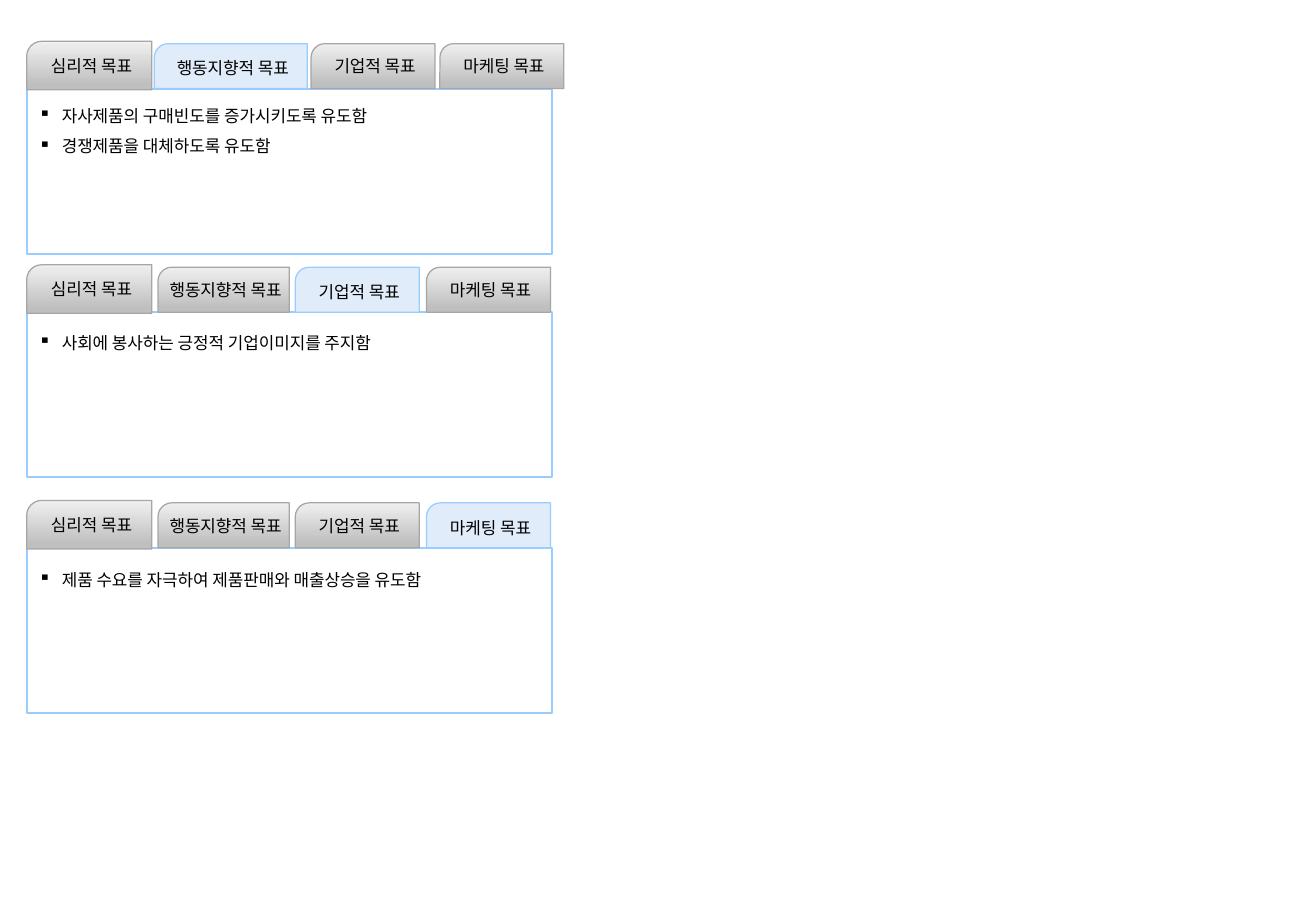
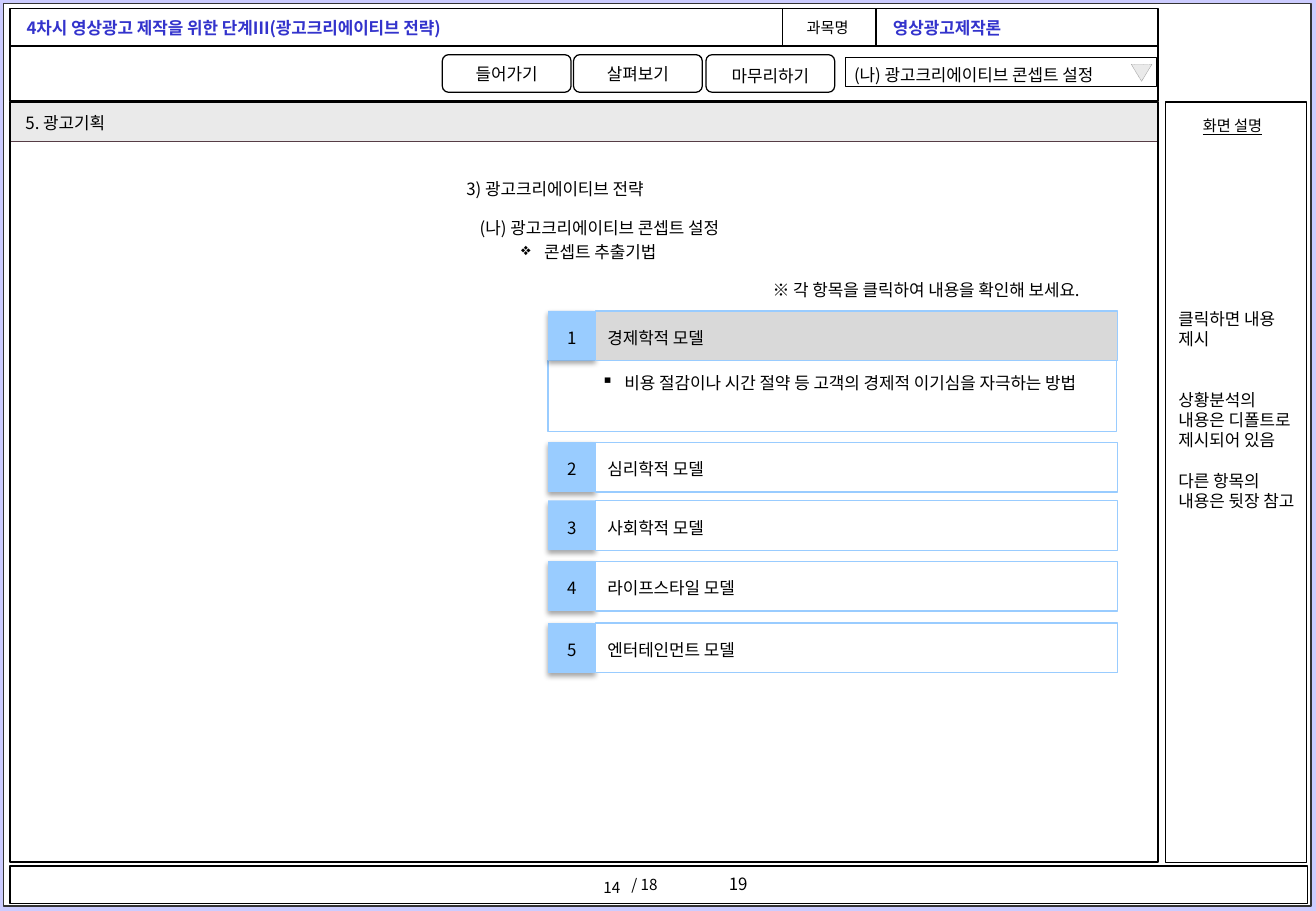
from copy import deepcopy
from dataclasses import dataclass
from typing import NamedTuple, Optional

from lxml.etree import SubElement
from pptx import Presentation
from pptx.dml.color import RGBColor
from pptx.enum.dml import MSO_LINE
from pptx.enum.shapes import MSO_SHAPE as Preset
from pptx.enum.text import MSO_ANCHOR as Anchor, MSO_AUTO_SIZE as AutoSize, PP_ALIGN as Align
from pptx.oxml.ns import qn
from pptx.shapes.autoshape import Shape
from pptx.slide import Slide
from pptx.util import Inches, Pt


@dataclass(frozen=True)
class Theme:
    font: str = "Noto Sans CJK KR"
    body: float = 10
    small: float = 9
    loose: float = 1.2
    black: RGBColor = RGBColor.from_string("000000")
    white: RGBColor = RGBColor.from_string("FFFFFF")
    border: RGBColor = RGBColor.from_string("333333")
    heading: RGBColor = RGBColor.from_string("3333CC")
    backdrop: RGBColor = RGBColor.from_string("CCCCFF")
    band: RGBColor = RGBColor.from_string("EAEAEA")
    band_line: RGBColor = RGBColor.from_string("563C45")
    arrow_line: RGBColor = RGBColor.from_string("969696")
    accent: RGBColor = RGBColor.from_string("99CCFF")
    active_tab: RGBColor = RGBColor.from_string("E1ECFB")
    tab_line: RGBColor = RGBColor.from_string("A6A6A6")
    open_row: RGBColor = RGBColor.from_string("D9D9D9")
    tab_stops: tuple[tuple[float, str], ...] = (
        (0, "BFBFBF"), (0.1, "BFBFBF"), (0.9, "EAEAEA"), (1, "F2F2F2"))


THEME = Theme()


class Area(NamedTuple):
    left: float
    top: float
    width: float
    height: float


@dataclass(frozen=True)
class TextStyle:
    size: float = THEME.body
    color: RGBColor = THEME.black
    bold: bool = False
    underline: bool = False
    align: Align = Align.LEFT
    anchor: Anchor = Anchor.TOP
    wrap: bool = True
    spacing: float = 1.0
    bullet: str = ""
    indent: float = 0


class Line(NamedTuple):
    text: str
    before: float = 0


class TabSpan(NamedTuple):
    left: float
    width: float


@dataclass(frozen=True)
class TabPanel:
    top: float
    active: int
    spans: tuple[TabSpan, ...]
    text_top: float
    lines: tuple[Line, ...]


class ModelRow(NamedTuple):
    top: float
    label: str


PLAIN = TextStyle()
LOOSE = TextStyle(spacing=THEME.loose)
BULLETS = TextStyle(bullet="▪", indent=0.19)
TAB = TextStyle(align=Align.CENTER, anchor=Anchor.MIDDLE, wrap=False)
CENTERED = TextStyle(align=Align.CENTER, anchor=Anchor.MIDDLE, spacing=THEME.loose)
ROW_LABEL = TextStyle(anchor=Anchor.MIDDLE, spacing=THEME.loose)

TABS = ("심리적 목표", "행동지향적 목표", "기업적 목표", "마케팅 목표")
WIDE_SPANS = (TabSpan(0.22, 1.03), TabSpan(1.27, 1.26), TabSpan(2.56, 1.02), TabSpan(3.62, 1.02))
EVEN_SPANS = (TabSpan(0.22, 1.03), TabSpan(1.3, 1.08), TabSpan(2.43, 1.02), TabSpan(3.51, 1.02))
PANELS = (
    TabPanel(0.73, 1, WIDE_SPANS, 0.82, (
        Line("자사제품의 구매빈도를 증가시키도록 유도함"), Line("경쟁제품을 대체하도록 유도함", 6))),
    TabPanel(2.57, 2, EVEN_SPANS, 2.69, (Line("사회에 봉사하는 긍정적 기업이미지를 주지함"),)),
    TabPanel(4.51, 3, EVEN_SPANS, 4.64, (Line("제품 수요를 자극하여 제품판매와 매출상승을 유도함"),)),
)
MODELS = (
    ModelRow(2.56, "경제학적 모델"),
    ModelRow(3.64, "심리학적 모델"),
    ModelRow(4.12, "사회학적 모델"),
    ModelRow(4.62, "라이프스타일 모델"),
    ModelRow(5.13, "엔터테인먼트 모델"),
)


def write(shape: Shape, lines: tuple[Line, ...], style: TextStyle) -> None:
    """Fill a shape with paragraphs that share one style."""
    frame = shape.text_frame
    frame.word_wrap = style.wrap
    frame.vertical_anchor = style.anchor
    for index, line in enumerate(lines):
        para = frame.paragraphs[0] if index == 0 else frame.add_paragraph()
        para.text = line.text
        para.alignment = style.align
        para.line_spacing = style.spacing
        para.space_before = Pt(line.before)
        properties = para._p.get_or_add_pPr()
        if style.indent:
            properties.set("marL", str(Inches(style.indent)))
        if style.bullet:
            properties.set("indent", str(-Inches(style.indent)))
            SubElement(properties, qn("a:buChar")).set("char", style.bullet)
        font = para.font
        font.name, font.size = THEME.font, Pt(style.size)
        font.bold, font.underline = style.bold, style.underline
        font.color.rgb = style.color
        east_asian = SubElement(properties.find(qn("a:defRPr")), qn("a:ea"))
        east_asian.set("typeface", THEME.font)


def add_text(page: Slide, area: Area, text: str | tuple[Line, ...],
             style: TextStyle = PLAIN) -> None:
    box = page.shapes.add_textbox(*map(Inches, area))
    write(box, (Line(text),) if isinstance(text, str) else text, style)
    box.text_frame.auto_size = AutoSize.SHAPE_TO_FIT_TEXT


def add_box(page: Slide, area: Area, fill: Optional[RGBColor] = None,
            line: Optional[RGBColor] = None, weight: float = 0.75, text: str = "",
            style: TextStyle = CENTERED, preset: Preset = Preset.RECTANGLE) -> Shape:
    box = page.shapes.add_shape(preset, *map(Inches, area))
    box.shadow.inherit = False
    if fill is None:
        box.fill.background()
    else:
        box.fill.solid()
        box.fill.fore_color.rgb = fill
    if line is None:
        box.line.fill.background()
    else:
        box.line.color.rgb = line
        box.line.width = Pt(weight)
    if text:
        write(box, (Line(text),), style)
    return box


def flip(shape: Shape, direction: str) -> None:
    shape._element.spPr.find(qn("a:xfrm")).set(direction, "1")


def shade_tab(tab: Shape) -> None:
    """Grey gradient, dark at the bottom."""
    tab.fill.gradient()
    tab.fill.gradient_angle = 90
    stop_list = tab._element.spPr.find(".//" + qn("a:gsLst"))
    for stop in list(stop_list):
        stop_list.append(deepcopy(stop))
    for stop, (position, color) in zip(tab.fill.gradient_stops, THEME.tab_stops):
        stop.position = position
        stop.color.rgb = RGBColor.from_string(color)


def drop_shadow(shape: Shape) -> None:
    effects = shape._element.spPr.find(qn("a:effectLst"))
    shadow = SubElement(effects, qn("a:outerShdw"), blurRad=str(Pt(3.1)), dist=str(Pt(1.8)),
                        dir="5400000", algn="t", rotWithShape="0")
    color = SubElement(shadow, qn("a:srgbClr"), val=str(THEME.black))
    SubElement(color, qn("a:alpha"), val="35000")


def draw_tab_panel(page: Slide, panel: TabPanel) -> None:
    add_box(page, Area(0.22, panel.top, 4.32, 1.36), THEME.white, THEME.accent, 1.2)
    for index, (label, span) in enumerate(zip(TABS, panel.spans)):
        rise, height = (0.39, 0.4) if index == 0 else (0.37, 0.37)
        active = index == panel.active
        tab = add_box(page, Area(span.left, panel.top - rise, span.width, height),
                      THEME.active_tab, THEME.accent if active else THEME.tab_line,
                      text=label, style=CENTERED if active else TAB,
                      preset=Preset.ROUND_1_RECTANGLE)
        tab.adjustments[0] = 0.31
        flip(tab, "flipH")
        if not active:
            shade_tab(tab)
    add_text(page, Area(0.22, panel.text_top, 4.32, 0.27), panel.lines, BULLETS)


def draw_frame(page: Slide) -> None:
    """Course frame: backdrop, header, navigation, side column and footer."""
    black, white = THEME.black, THEME.white
    add_box(page, Area(0, 0, 10.83, 7.5), THEME.backdrop)
    add_box(page, Area(0.03, 0.03, 10.76, 7.43), white, THEME.border)
    add_box(page, Area(0.08, 0.84, 9.45, 0.32), THEME.band, THEME.band_line, 0.25)
    for area, weight in (
        (Area(0.08, 7.13, 10.68, 0.31), 1),
        (Area(0.08, 0.84, 9.45, 6.26), 1),
        (Area(9.59, 0.84, 1.16, 6.26), 0.75),
        (Area(0.08, 0.07, 9.45, 0.31), 1),
        (Area(6.44, 0.07, 0.77, 0.31), 1),
        (Area(0.08, 0.38, 9.45, 0.45), 1),
    ):
        add_box(page, area, line=black, weight=weight)

    # Header and footer text
    small = TextStyle(size=THEME.small, wrap=False)
    add_text(page, Area(0.12, 0.1, 5.17, 0.27), "4차시 영상광고 제작을 위한 단계Ⅲ(광고크리에이티브 전략)",
             TextStyle(color=THEME.heading, bold=True))
    add_text(page, Area(6.54, 0.1, 0.58, 0.25), "과목명", small)
    add_text(page, Area(7.25, 0.06, 2.26, 0.28), "영상광고제작론",
             TextStyle(color=THEME.heading, bold=True, spacing=THEME.loose))
    add_text(page, Area(9.8, 0.91, 0.74, 0.25), "화면 설명",
             TextStyle(size=THEME.small, underline=True, wrap=False))
    add_text(page, Area(5.9, 7.14, 0.41, 0.27), "19", TextStyle(wrap=False))
    add_text(page, Area(5.07, 7.16, 0.44, 0.25), "/ 18",
             TextStyle(size=THEME.small, align=Align.RIGHT, wrap=False))
    add_text(page, Area(4.84, 7.15, 0.39, 0.28), "14",
             TextStyle(size=THEME.small, align=Align.CENTER, spacing=THEME.loose))

    # Navigation buttons and drop-down
    for left, label, spacing in (
            (3.64, "들어가기", 1.0), (4.72, "살펴보기", 1.0), (5.81, "마무리하기", THEME.loose)):
        add_box(page, Area(left, 0.45, 1.06, 0.31), white, black, text=label,
                style=TextStyle(align=Align.CENTER, anchor=Anchor.MIDDLE, wrap=False,
                                spacing=spacing), preset=Preset.ROUNDED_RECTANGLE)
    add_box(page, Area(6.96, 0.47, 2.56, 0.24), white, black, 0.25)
    arrow = add_box(page, Area(9.31, 0.53, 0.17, 0.14), THEME.band, THEME.arrow_line, 0.25,
                    preset=Preset.ISOSCELES_TRIANGLE)
    arrow.line.dash_style = MSO_LINE.ROUND_DOT
    flip(arrow, "flipV")
    add_text(page, Area(6.93, 0.45, 2.57, 0.31), "(나) 광고크리에이티브 콘셉트 설정", LOOSE)


def set_title(page: Slide, text: str) -> None:
    title = page.shapes.title
    title.left, title.top, title.width, title.height = map(Inches, (0.11, 0.84, 5.31, 0.31))
    write(title, (Line(text),), LOOSE)
    title.text_frame.auto_size = AutoSize.NONE
    page.shapes._spTree.append(title._element)  # in front of the band


def draw_models(page: Slide) -> None:
    """Accordion of numbered models with the first one open."""
    add_box(page, Area(4.51, 2.97, 4.68, 0.58), THEME.white, THEME.accent)
    for number, row in enumerate(MODELS, start=1):
        marker = add_box(page, Area(4.51, row.top, 0.39, 0.41), THEME.accent, text=str(number))
        drop_shadow(marker)
        add_box(page, Area(4.9, row.top, 4.3, 0.41),
                THEME.open_row if number == 1 else THEME.white, THEME.accent,
                text=row.label, style=ROW_LABEL)
    add_text(page, Area(4.85, 3.02, 4.51, 0.27),
             "비용 절감이나 시간 절약 등 고객의 경제적 이기심을 자극하는 방법", BULLETS)


def main() -> None:
    deck = Presentation()
    deck.slide_width, deck.slide_height = Inches(10.83), Inches(7.5)

    # Slide 1: tabbed panels
    page = deck.slides.add_slide(deck.slide_layouts[6])
    for panel in PANELS:
        draw_tab_panel(page, panel)

    # Slide 2: concept models
    page = deck.slides.add_slide(deck.slide_layouts[5])
    draw_frame(page)
    set_title(page, "5. 광고기획")
    add_text(page, Area(3.74, 1.39, 1.73, 0.3), "3) 광고크리에이티브 전략",
             TextStyle(wrap=False, spacing=THEME.loose))
    add_text(page, Area(3.79, 1.7, 2.93, 0.31), "(나) 광고크리에이티브 콘셉트 설정",
             TextStyle(anchor=Anchor.MIDDLE, spacing=THEME.loose, indent=0.06))
    add_text(page, Area(4.19, 1.94, 1.39, 0.27), "콘셉트 추출기법",
             TextStyle(wrap=False, bullet="❖", indent=0.19))
    add_text(page, Area(6.26, 2.22, 3.23, 0.3), "※ 각 항목을 클릭하여 내용을 확인해 보세요.", LOOSE)
    draw_models(page)
    add_text(page, Area(9.6, 2.49, 1.16, 1.95), (
        Line("클릭하면 내용 제시"),
        Line("상황분석의 내용은 디폴트로 제시되어 있음", 24),
        Line("다른 항목의 내용은 뒷장 참고", 12)))
    deck.save("out.pptx")


if __name__ == "__main__":
    main()
